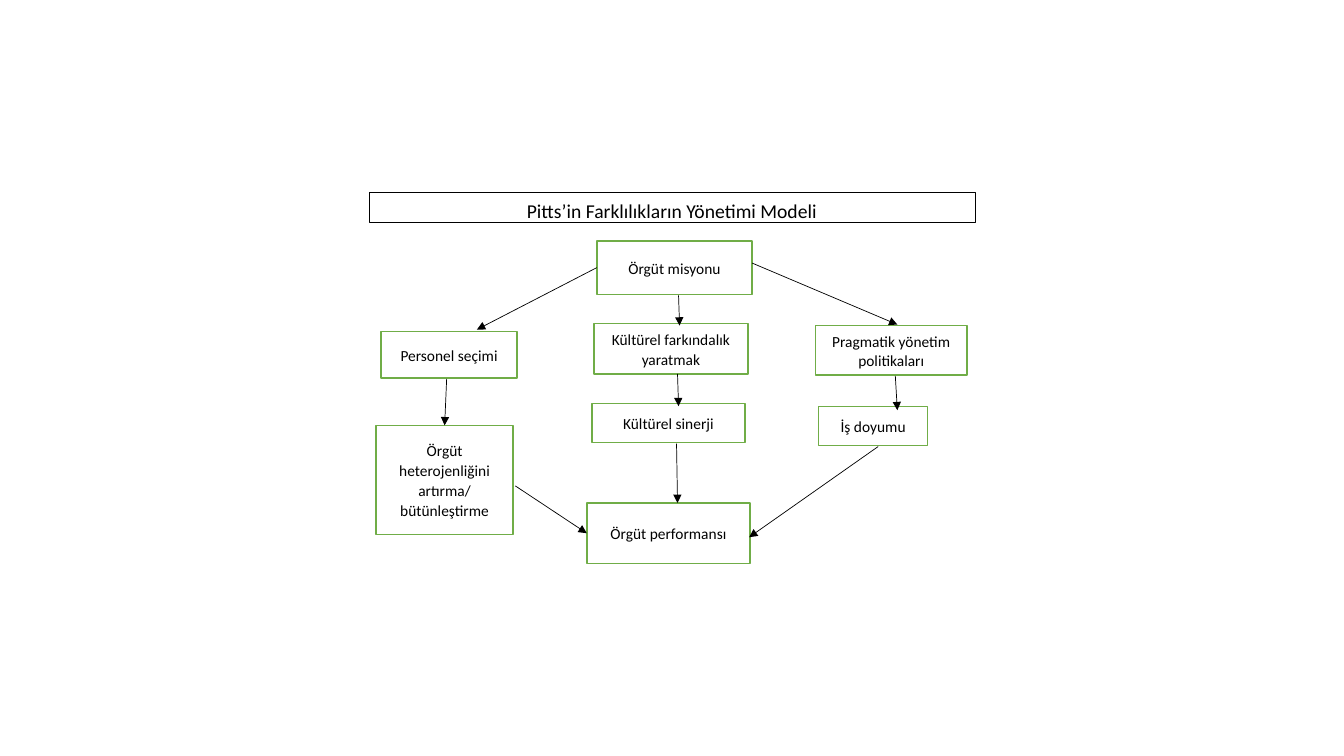
from dataclasses import dataclass

from lxml import etree
from pptx import Presentation
from pptx import util as u
from pptx.dml.color import RGBColor
from pptx.enum import shapes, text
from pptx.oxml import ns


@dataclass(frozen=True)
class Theme:
    font: str = "Calibri"
    ink: RGBColor = RGBColor(0, 0, 0)
    paper: RGBColor = RGBColor(255, 255, 255)
    green: RGBColor = RGBColor(0x70, 0xAD, 0x47)
    title_size: float = 14
    step_size: float = 11
    thin: float = 0.5
    outline: float = 1


THEME = Theme()
LEFT, RIGHT, TOP = 1, 3, 0

# Steps: text and left, top, width, height within the diagram
STEPS = {
    "misyon": ("Örgüt misyonu", 2.26, 0.48, 1.54, 0.53),
    "farkındalık": ("Kültürel farkındalık yaratmak", 2.23, 1.3, 1.53, 0.5),
    "sinerji": ("Kültürel sinerji", 2.21, 2.09, 1.52, 0.39),
    "performans": ("Örgüt performansı", 2.16, 3.08, 1.62, 0.6),
    "personel": ("Personel seçimi", 0.12, 1.38, 1.35, 0.46),
    "politika": ("Pragmatik yönetim politikaları", 4.43, 1.32, 1.5, 0.49),
    "doyum": ("İş doyumu", 4.46, 2.12, 1.08, 0.39),
    "heterojenlik": ("Örgüt heterojenliğini artırma/ bütünleştirme",
                     0.07, 2.31, 1.36, 1.08),
}

# Arrows: each end is a point within the diagram, or a step and its side
ARROWS = [
    (("misyon", LEFT), (1.07, 1.36)),
    ((3.8, 0.7), (5.24, 1.31)),
    ((3.07, 1.02), (3.08, 1.32)),
    ((0.77, 1.85), ("heterojenlik", TOP)),
    ((3.06, 1.8), (3.07, 2.12)),
    ((3.05, 2.49), (3.06, 3.08)),
    ((5.22, 1.82), (5.24, 2.16)),
    ((1.45, 2.91), ("performans", LEFT)),
    ((5.05, 2.52), (3.77, 3.42)),
]


def apply(target, formats):
    for name, value in formats.items():
        setattr(target, name, value)


def format_box(box, words, size, line_color, line_width, anchor):
    box.fill.solid()
    box.fill.fore_color.rgb = THEME.paper
    box.line.color.rgb = line_color
    box.line.width = u.Pt(line_width)
    frame = box.text_frame
    frame.text = words
    apply(frame, {
        "word_wrap": True, "auto_size": text.MSO_AUTO_SIZE.NONE,
        "vertical_anchor": anchor,
        "margin_left": u.Inches(0.1), "margin_right": u.Inches(0.1),
        "margin_top": u.Inches(0.05), "margin_bottom": u.Inches(0.05),
    })
    paragraph = frame.paragraphs[0]
    apply(paragraph, {
        "alignment": text.PP_ALIGN.CENTER, "line_spacing": 1.07,
        "space_before": u.Pt(0), "space_after": u.Pt(8),
    })
    font = paragraph.runs[0].font
    apply(font, {"name": THEME.font, "size": u.Pt(size)})
    font.color.rgb = THEME.ink


def add_title(slide, left, top, width, height):
    title = slide.shapes.title
    apply(title, {"left": u.Inches(left), "top": u.Inches(top),
                  "width": u.Inches(width), "height": u.Inches(height)})
    format_box(title, "Pitts’in Farklılıkların Yönetimi Modeli",
               THEME.title_size, THEME.ink, THEME.thin, text.MSO_ANCHOR.TOP)


def add_arrow(slide, left, top, start, end, boxes):
    def point(target):
        if target[0] in boxes:
            return 0, 0
        return u.Inches(left + target[0]), u.Inches(top + target[1])

    arrow = slide.shapes.add_connector(
        shapes.MSO_CONNECTOR.STRAIGHT, *point(start), *point(end))
    for target, join in ((start, arrow.begin_connect), (end, arrow.end_connect)):
        if target[0] in boxes:
            join(boxes[target[0]], target[1])
    arrow.line.color.rgb = THEME.ink
    arrow.line.width = u.Pt(THEME.thin)
    # Arrowhead and no shadow
    properties = arrow.line._get_or_add_ln()
    etree.SubElement(properties, ns.qn("a:tailEnd"), type="triangle")
    etree.SubElement(properties.getparent(), ns.qn("a:effectLst"))


def add_model(slide, left, top):
    boxes = {}
    for key, (words, x, y, width, height) in STEPS.items():
        step = slide.shapes.add_shape(
            shapes.MSO_SHAPE.RECTANGLE, u.Inches(left + x), u.Inches(top + y),
            u.Inches(width), u.Inches(height))
        step.shadow.inherit = False
        format_box(step, words, THEME.step_size, THEME.green, THEME.outline,
                   text.MSO_ANCHOR.MIDDLE)
        boxes[key] = step
    for start, end in ARROWS:
        add_arrow(slide, left, top, start, end, boxes)


def main():
    deck = Presentation()
    apply(deck, {"slide_width": u.Inches(13.33), "slide_height": u.Inches(7.5)})
    slide = deck.slides.add_slide(deck.slide_layouts.get_by_name("Title Only"))
    left, top = 3.66, 1.91
    add_title(slide, left, top, 6.01, 0.3)
    add_model(slide, left, top)
    deck.save("out.pptx")


if __name__ == "__main__":
    main()
